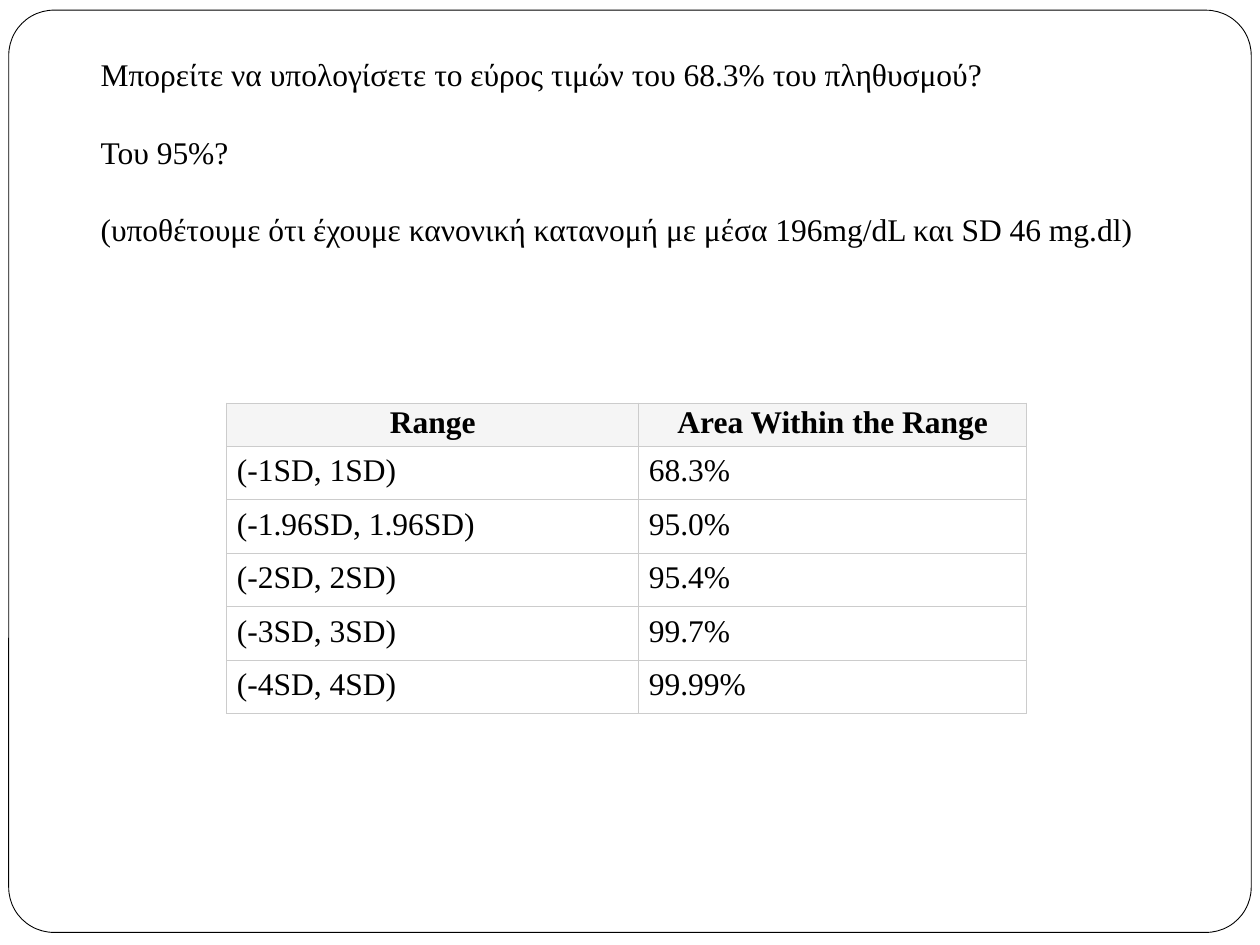
from dataclasses import dataclass

from lxml.etree import SubElement
from pptx import Presentation
from pptx.dml.color import RGBColor
from pptx.enum.shapes import MSO_SHAPE
from pptx.enum.text import PP_ALIGN
from pptx.oxml.ns import qn
from pptx.util import Pt


@dataclass(frozen=True)
class Theme:
    font: str = "Times New Roman"
    size: float = 18
    ink: RGBColor = RGBColor(0x00, 0x00, 0x00)
    paper: RGBColor = RGBColor(0xFF, 0xFF, 0xFF)
    header: RGBColor = RGBColor(0xF5, 0xF5, 0xF5)
    border: str = "CCCCCC"


@dataclass(frozen=True)
class RangeRow:
    limits: str
    area: str


THEME = Theme()
QUESTIONS = [
    "Μπορείτε να υπολογίσετε το εύρος τιμών του 68.3% του πληθυσμού?",
    "Του 95%?",
    "(υποθέτουμε ότι έχουμε κανονική κατανομή με μέσα 196mg/dL και SD 46 mg.dl)",
]
ROWS = [
    RangeRow("Range", "Area Within the Range"),
    RangeRow("(-1SD, 1SD)", "68.3%"),
    RangeRow("(-1.96SD, 1.96SD)", "95.0%"),
    RangeRow("(-2SD, 2SD)", "95.4%"),
    RangeRow("(-3SD, 3SD)", "99.7%"),
    RangeRow("(-4SD, 4SD)", "99.99%"),
]
COLUMN_WIDTHS = (235.4, 221.8)
HEADER_HEIGHT, ROW_HEIGHT = 24.6, 30.6


def write(para, text: str, *, bold: bool = False,
          align: PP_ALIGN = PP_ALIGN.LEFT, before: float = 0) -> None:
    para.alignment = align
    para.space_before = Pt(before)
    span = para.add_run()
    span.text = text
    span.font.name = THEME.font
    span.font.size = Pt(THEME.size)
    span.font.bold = bold
    span.font.color.rgb = THEME.ink


def add_frame(page) -> None:
    frame = page.shapes.add_shape(MSO_SHAPE.ROUNDED_RECTANGLE,
                                  Pt(5), Pt(5.8), Pt(710), Pt(527))
    frame.adjustments[0] = 0.049
    frame.shadow.inherit = False
    frame.fill.solid()
    frame.fill.fore_color.rgb = THEME.paper
    frame.line.color.rgb = THEME.ink
    frame.line.width = Pt(0.5)


def add_questions(page) -> None:
    box = page.shapes.add_textbox(Pt(50.4), Pt(28.1), Pt(607.7), Pt(138.2))
    box.text_frame.word_wrap = True
    for index, question in enumerate(QUESTIONS):
        para = box.text_frame.add_paragraph() if index else box.text_frame.paragraphs[0]
        write(para, question, before=22.7 if index else 0)


def set_borders(cell, width: float = 0.75) -> None:
    properties = cell._tc.get_or_add_tcPr()
    for position, side in enumerate(("a:lnL", "a:lnR", "a:lnT", "a:lnB")):
        line = SubElement(properties, qn(side), w=str(Pt(width)))
        fill = SubElement(line, qn("a:solidFill"))
        SubElement(fill, qn("a:srgbClr"), val=THEME.border)
        properties.insert(position, line)  # borders come before the fill


def fill_cell(cell, text: str, *, header: bool) -> None:
    cell.margin_left = cell.margin_right = Pt(1.4 if header else 5.8)
    cell.margin_top = cell.margin_bottom = Pt(1.4 if header else 4.3)
    cell.fill.solid()
    cell.fill.fore_color.rgb = THEME.header if header else THEME.paper
    write(cell.text_frame.paragraphs[0], text, bold=header,
          align=PP_ALIGN.CENTER if header else PP_ALIGN.LEFT)
    set_borders(cell)


def add_range_table(page) -> None:
    height = HEADER_HEIGHT + ROW_HEIGHT * (len(ROWS) - 1)
    table = page.shapes.add_table(len(ROWS), len(COLUMN_WIDTHS), Pt(129.6), Pt(230.4),
                                  Pt(sum(COLUMN_WIDTHS)), Pt(height)).table
    table.horz_banding = False
    for column, width in zip(table.columns, COLUMN_WIDTHS):
        column.width = Pt(width)
    for index, row in enumerate(ROWS):
        header = index == 0
        table.rows[index].height = Pt(HEADER_HEIGHT if header else ROW_HEIGHT)
        for column, text in enumerate((row.limits, row.area)):
            fill_cell(table.cell(index, column), text, header=header)


def main() -> None:
    deck = Presentation()
    deck.slide_width, deck.slide_height = Pt(720), Pt(540)
    page = deck.slides.add_slide(deck.slide_layouts[6])
    add_frame(page)
    add_questions(page)
    add_range_table(page)
    deck.save("out.pptx")


if __name__ == "__main__":
    main()
